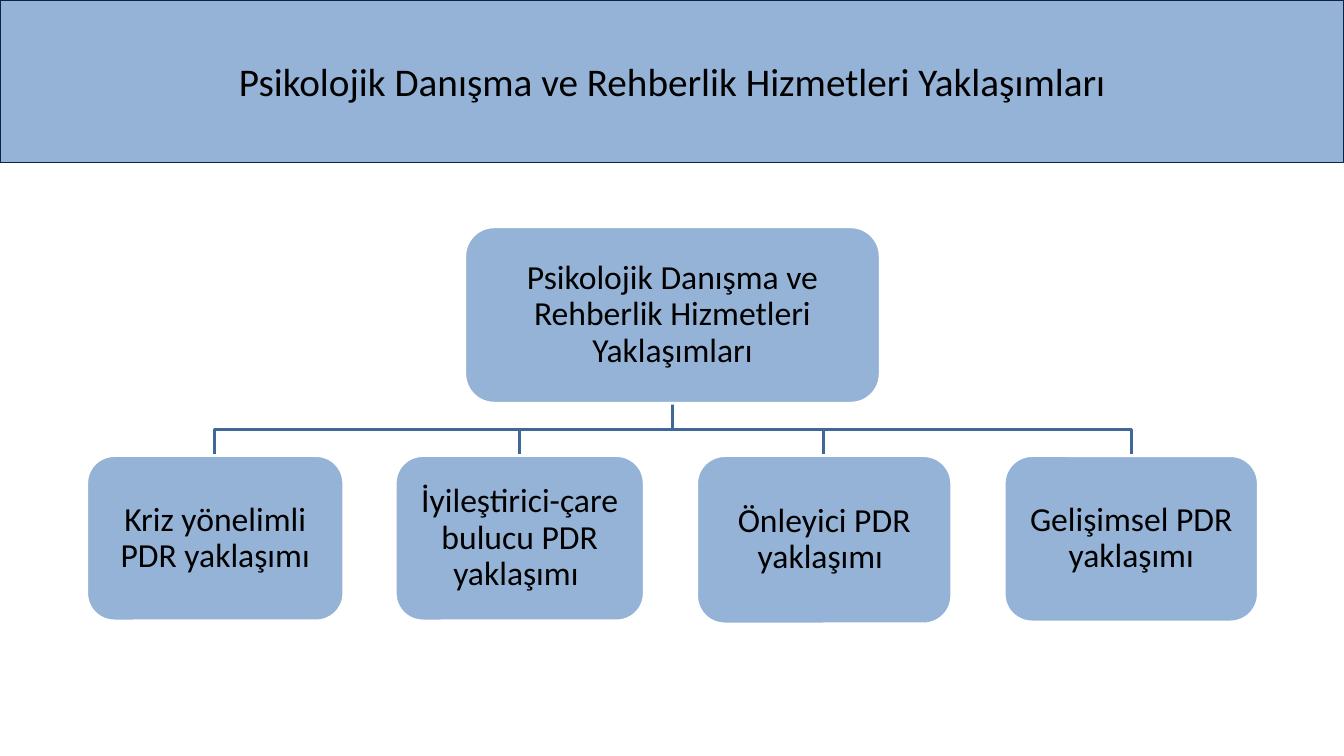
from pptx import Presentation
from pptx import util as u
from pptx.dml.color import RGBColor
from pptx.enum import shapes, text

PX = 9144  # EMU per px, 100 px to the inch
SLIDE_W, SLIDE_H = 1333, 750

BLUE = RGBColor(0x95, 0xB3, 0xD7)
NAVY = RGBColor(0x0F, 0x24, 0x3E)
BRANCH_BLUE = RGBColor(0x3F, 0x67, 0x97)
WHITE = RGBColor(0xFF, 0xFF, 0xFF)
BLACK = RGBColor(0, 0, 0)

HEADING = "Psikolojik Danışma ve Rehberlik Hizmetleri Yaklaşımları"
ALTERNATE = shapes.MSO_SHAPE.FLOWCHART_ALTERNATE_PROCESS
ROUNDED = shapes.MSO_SHAPE.ROUNDED_RECTANGLE

# Org chart: preset, left, width, height, wording
ROOT_TOP, ROOT_BOTTOM, BRANCH_Y, LEAF_TOP = 225, 401, 426, 452
ROOT = (ALTERNATE, 461, 412, 175, HEADING)
APPROACHES = [
    (ALTERNATE, 86, 255, 164, "Kriz yönelimli PDR yaklaşımı"),
    (ROUNDED, 392, 247, 164, "İyileştirici-çare bulucu PDR yaklaşımı "),
    (ROUNDED, 691, 253, 167, "Önleyici PDR yaklaşımı "),
    (ROUNDED, 996, 252, 165, "Gelişimsel PDR yaklaşımı"),
]


def px(*lengths):
    return [u.Emu(length * PX) for length in lengths]


def write(shape, wording, size=24, spacing=1.0, inset=10):
    frame = shape.text_frame
    frame.word_wrap = True
    frame.auto_size = text.MSO_AUTO_SIZE.NONE
    frame.vertical_anchor = text.MSO_ANCHOR.MIDDLE
    frame.margin_left = frame.margin_right = u.Emu(inset * PX)
    frame.margin_top = frame.margin_bottom = u.Emu(inset * PX)
    paragraph = frame.paragraphs[0]
    paragraph.alignment = text.PP_ALIGN.CENTER
    paragraph.line_spacing = spacing
    run = paragraph.add_run()
    run.text = wording
    run.font.name = "Calibri"
    run.font.size = u.Pt(size)
    run.font.color.rgb = BLACK


def paint(shape, line_color, line_width):
    shape.fill.solid()
    shape.fill.fore_color.rgb = BLUE
    shape.line.color.rgb = line_color
    shape.line.width = u.Pt(line_width)


def add_banner(slide):
    banner = slide.shapes.title
    banner.left, banner.top, banner.width, banner.height = px(0, 0, SLIDE_W, 161)
    paint(banner, NAVY, 0.75)
    write(banner, HEADING, size=28)


def add_branch(slide, start_x, end_x):
    builder = slide.shapes.build_freeform(start_x, ROOT_BOTTOM, scale=PX)
    builder.add_line_segments(
        [(start_x, BRANCH_Y), (end_x, BRANCH_Y), (end_x, LEAF_TOP)], close=False)
    branch = builder.convert_to_shape()
    branch.shadow.inherit = False
    branch.fill.background()
    branch.line.color.rgb = BRANCH_BLUE
    branch.line.width = u.Pt(2)


def add_node(slide, top, preset, left, width, height, wording):
    node = slide.shapes.add_shape(preset, *px(left, top, width, height))
    node.shadow.inherit = False
    paint(node, WHITE, 2)
    write(node, wording, spacing=0.9)


def main():
    deck = Presentation()
    deck.slide_width, deck.slide_height = px(SLIDE_W, SLIDE_H)
    slide = deck.slides.add_slide(deck.slide_layouts[5])
    add_banner(slide)

    # Branches lie behind the boxes
    root_x = ROOT[1] + ROOT[2] // 2
    for _, left, width, _, _ in reversed(APPROACHES):
        add_branch(slide, root_x, left + width // 2)

    # Root and its four approaches
    add_node(slide, ROOT_TOP, *ROOT)
    for approach in APPROACHES:
        add_node(slide, LEAF_TOP, *approach)

    deck.save("out.pptx")


if __name__ == "__main__":
    main()
